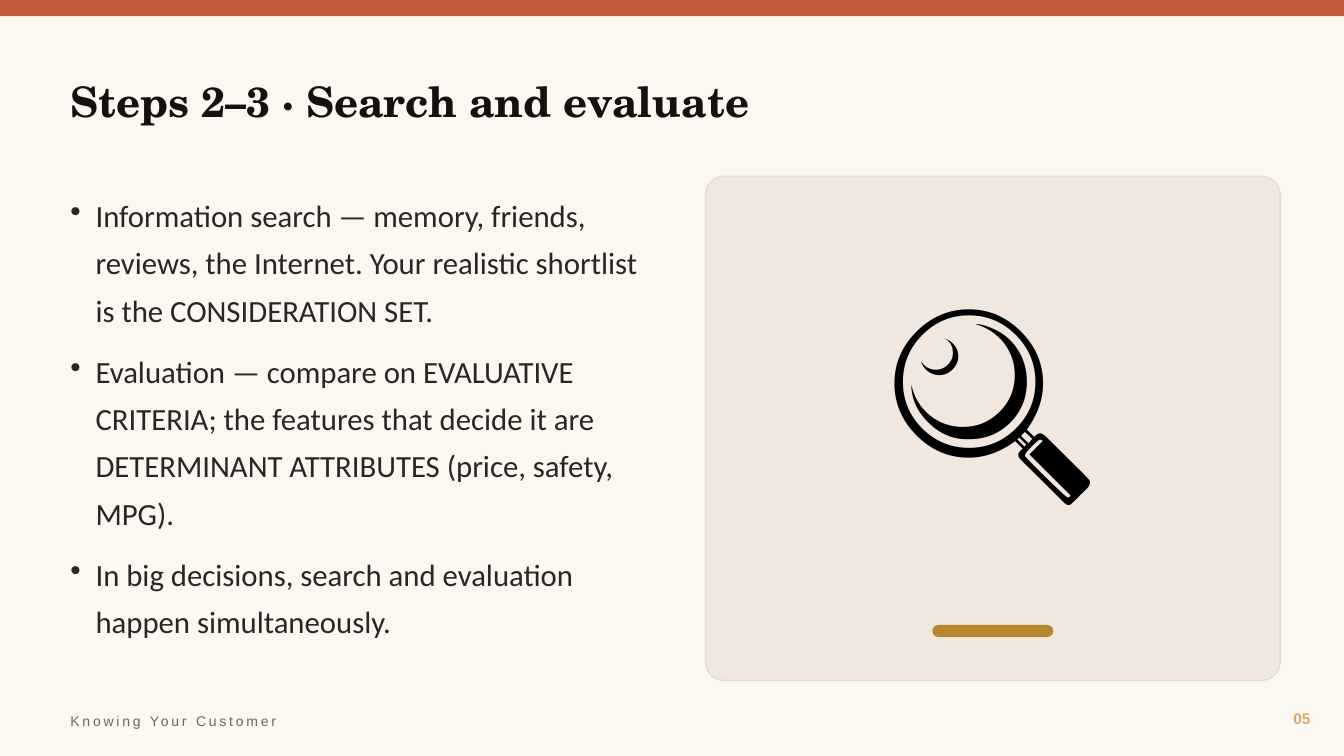
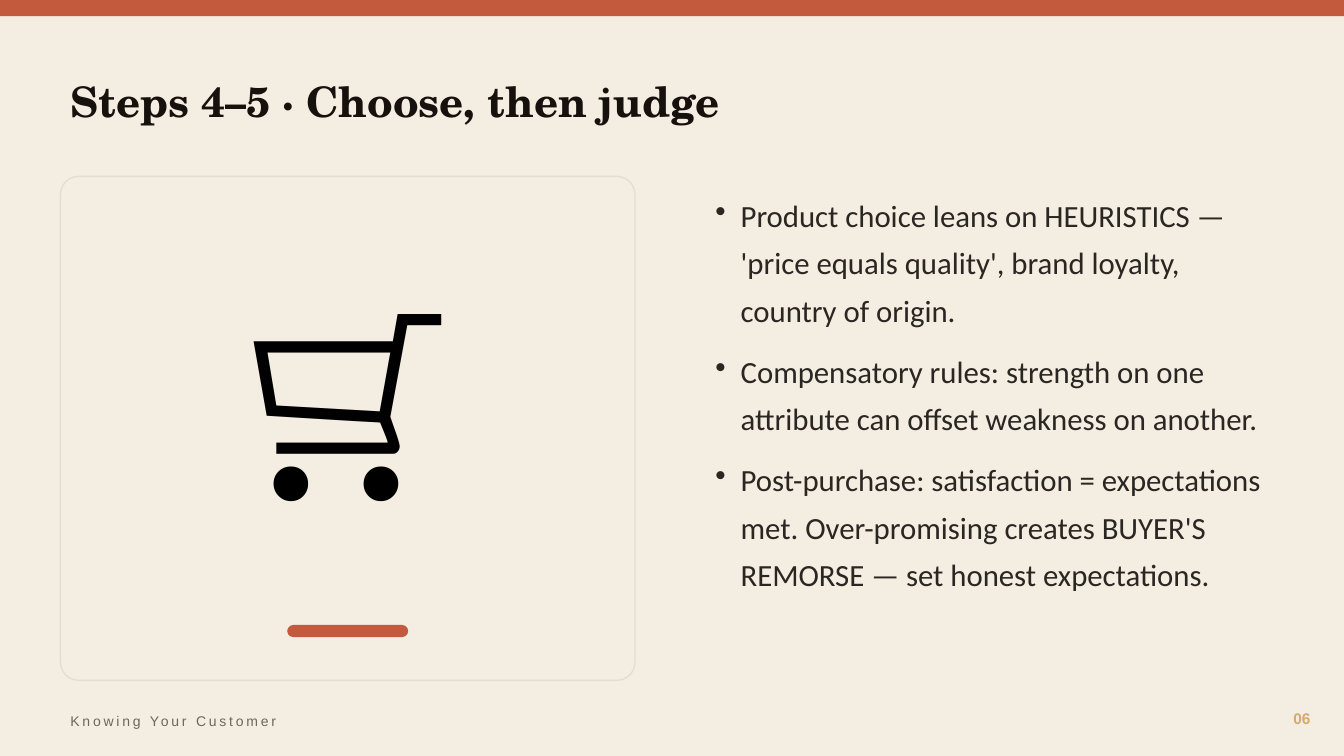
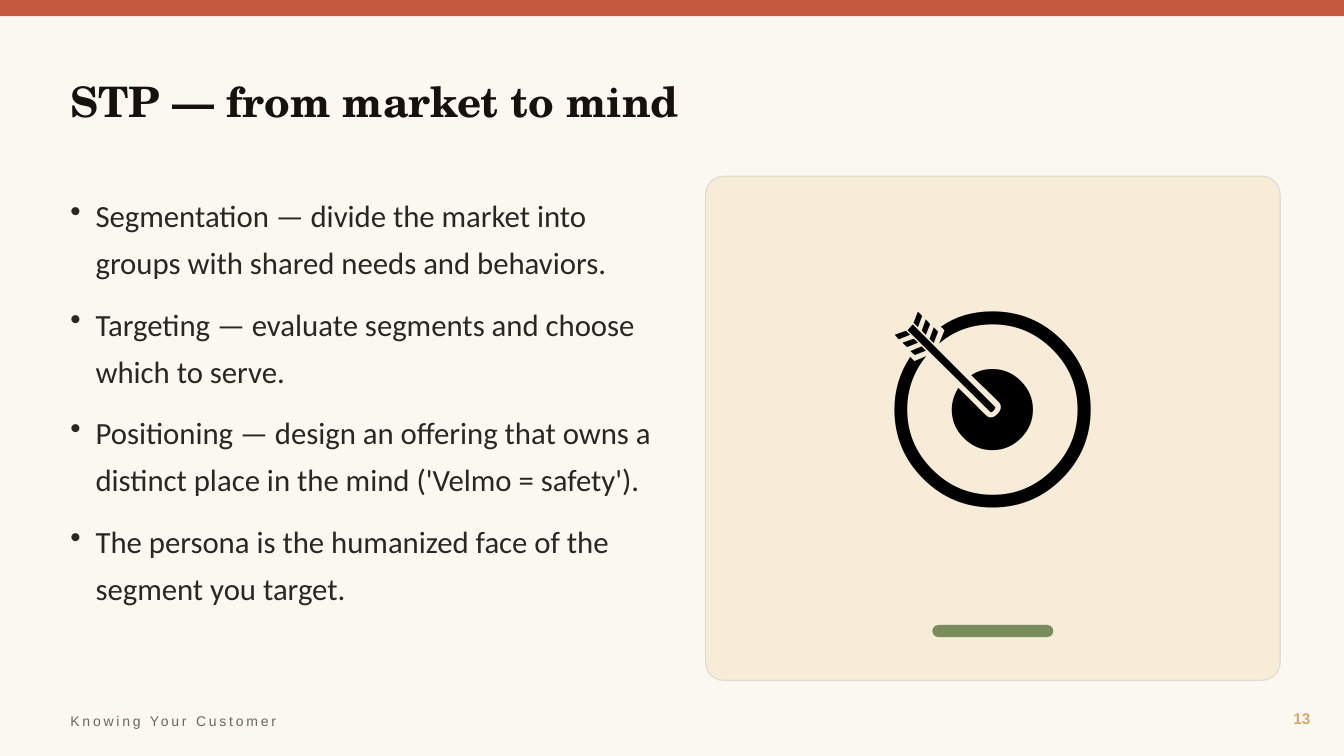
from lxml.etree import SubElement
from pptx import Presentation
from pptx.dml.color import RGBColor
from pptx.enum.shapes import MSO_SHAPE as Preset
from pptx.enum.text import MSO_ANCHOR as Anchor, PP_ALIGN as Align
from pptx.oxml.ns import qn
from pptx.util import Pt

COLORS = {
    "ivory": "FBF7F1", "sand": "F4EDE2", "blush": "F2E7DE", "cream": "F6ECD8",
    "terracotta": "C45A3D", "ochre": "B8862F", "olive": "7A8C5C",
    "border": "E4DDD0", "title": "16110D", "body": "2A2622",
    "number": "D9A86C", "footer": "6E665C", "black": "000000",
}
TITLE_FONT, BODY_FONT, FOOTER_FONT = "TeX Gyre Schola", "Calibri", "Arial"

SLIDE_WIDTH, SLIDE_HEIGHT = 960, 540
LEFT_MARGIN, RIGHT_COLUMN = 43.2, 504
PANEL_TOP, PANEL_WIDTH, PANEL_HEIGHT = 126, 410.4, 360
ACCENT_WIDTH, ACCENT_HEIGHT = 86.4, 8.64

SLIDES = [
    {
        "number": "05", "title": "Steps 2–3 · Search and evaluate", "icon": "🔍",
        "background": "ivory", "panel": "blush", "accent": "ochre",
        "panel_left": RIGHT_COLUMN, "text_left": LEFT_MARGIN, "text_width": 432,
        "bullets": [
            "Information search — memory, friends, reviews, the Internet. "
            "Your realistic shortlist is the CONSIDERATION SET.",
            "Evaluation — compare on EVALUATIVE CRITERIA; the features that "
            "decide it are DETERMINANT ATTRIBUTES (price, safety, MPG).",
            "In big decisions, search and evaluation happen simultaneously.",
        ],
    },
    {
        "number": "06", "title": "Steps 4–5 · Choose, then judge", "icon": "🛒",
        "background": "sand", "panel": "sand", "accent": "terracotta",
        "panel_left": LEFT_MARGIN, "text_left": RIGHT_COLUMN, "text_width": PANEL_WIDTH,
        "bullets": [
            "Product choice leans on HEURISTICS — 'price equals quality', "
            "brand loyalty, country of origin.",
            "Compensatory rules: strength on one attribute can offset "
            "weakness on another.",
            "Post-purchase: satisfaction = expectations met. Over-promising "
            "creates BUYER'S REMORSE — set honest expectations.",
        ],
    },
    {
        "number": "13", "title": "STP — from market to mind", "icon": "🎯",
        "background": "ivory", "panel": "cream", "accent": "olive",
        "panel_left": RIGHT_COLUMN, "text_left": LEFT_MARGIN, "text_width": 432,
        "bullets": [
            "Segmentation — divide the market into groups with shared needs "
            "and behaviors.",
            "Targeting — evaluate segments and choose which to serve.",
            "Positioning — design an offering that owns a distinct place in "
            "the mind ('Velmo = safety').",
            "The persona is the humanized face of the segment you target.",
        ],
    },
]


def add_text(slide, paragraphs, left, top, width, height, *, font, size, color,
             bold=False, align=Align.LEFT, anchor=Anchor.MIDDLE, bullets=False,
             tracking=None):
    """Add a text box with one paragraph per string; tracking is in points."""
    box = slide.shapes.add_textbox(Pt(left), Pt(top), Pt(width), Pt(height))
    frame = box.text_frame
    frame.word_wrap = True
    frame.vertical_anchor = anchor
    for index, text in enumerate(paragraphs):
        paragraph = frame.paragraphs[0] if index == 0 else frame.add_paragraph()
        paragraph.alignment = align
        if bullets:
            properties = paragraph._p.get_or_add_pPr()
            properties.set("marL", str(Pt(18)))
            properties.set("indent", str(Pt(-18)))
            SubElement(properties, qn("a:buChar")).set("char", "•")
            paragraph.line_spacing = 1.28
            paragraph.space_after = Pt(10)
        run = paragraph.add_run()
        run.text = text
        run.font.name = font
        run.font.size = Pt(size)
        run.font.bold = bold
        run.font.color.rgb = RGBColor.from_string(COLORS[color])
        if tracking:
            run._r.get_or_add_rPr().set("spc", str(tracking * 100))


def add_block(slide, preset, left, top, width, height, fill, line=None, rounding=None):
    shape = slide.shapes.add_shape(preset, Pt(left), Pt(top), Pt(width), Pt(height))
    shape.shadow.inherit = False
    shape.fill.solid()
    shape.fill.fore_color.rgb = RGBColor.from_string(COLORS[fill])
    if line:
        shape.line.color.rgb = RGBColor.from_string(COLORS[line])
        shape.line.width = Pt(1)
    else:
        shape.line.fill.background()
    if rounding is not None:
        shape.adjustments[0] = rounding


presentation = Presentation()
presentation.slide_width = Pt(SLIDE_WIDTH)
presentation.slide_height = Pt(SLIDE_HEIGHT)
blank_layout = presentation.slide_layouts[6]

for content in SLIDES:
    slide = presentation.slides.add_slide(blank_layout)
    background = slide.background.fill
    background.solid()
    background.fore_color.rgb = RGBColor.from_string(COLORS[content["background"]])

    add_block(slide, Preset.RECTANGLE, 0, 0, SLIDE_WIDTH, 11.52, "terracotta")
    add_text(slide, [content["title"]], LEFT_MARGIN, 36, 871.2, 72,
             font=TITLE_FONT, size=30, color="title", bold=True)

    panel_left = content["panel_left"]
    add_block(slide, Preset.ROUNDED_RECTANGLE, panel_left, PANEL_TOP, PANEL_WIDTH,
              PANEL_HEIGHT, content["panel"], line="border", rounding=0.036)
    add_text(slide, [content["icon"]], panel_left, PANEL_TOP, PANEL_WIDTH, 295.2,
             font=BODY_FONT, size=150, color="black", align=Align.CENTER)
    add_block(slide, Preset.ROUNDED_RECTANGLE,
              panel_left + (PANEL_WIDTH - ACCENT_WIDTH) / 2, 446.4,
              ACCENT_WIDTH, ACCENT_HEIGHT, content["accent"], rounding=0.5)

    add_text(slide, content["bullets"], content["text_left"], 129.6,
             content["text_width"], 360, font=BODY_FONT, size=22, color="body",
             anchor=Anchor.TOP, bullets=True)

    add_text(slide, [content["number"]], 878.4, 500.4, 64.8, 25.2,
             font=FOOTER_FONT, size=11, color="number", bold=True, align=Align.RIGHT)
    add_text(slide, ["Knowing Your Customer"], LEFT_MARGIN, 504, 576, 21.6,
             font=FOOTER_FONT, size=10, color="footer", tracking=2)

presentation.save("out.pptx")
